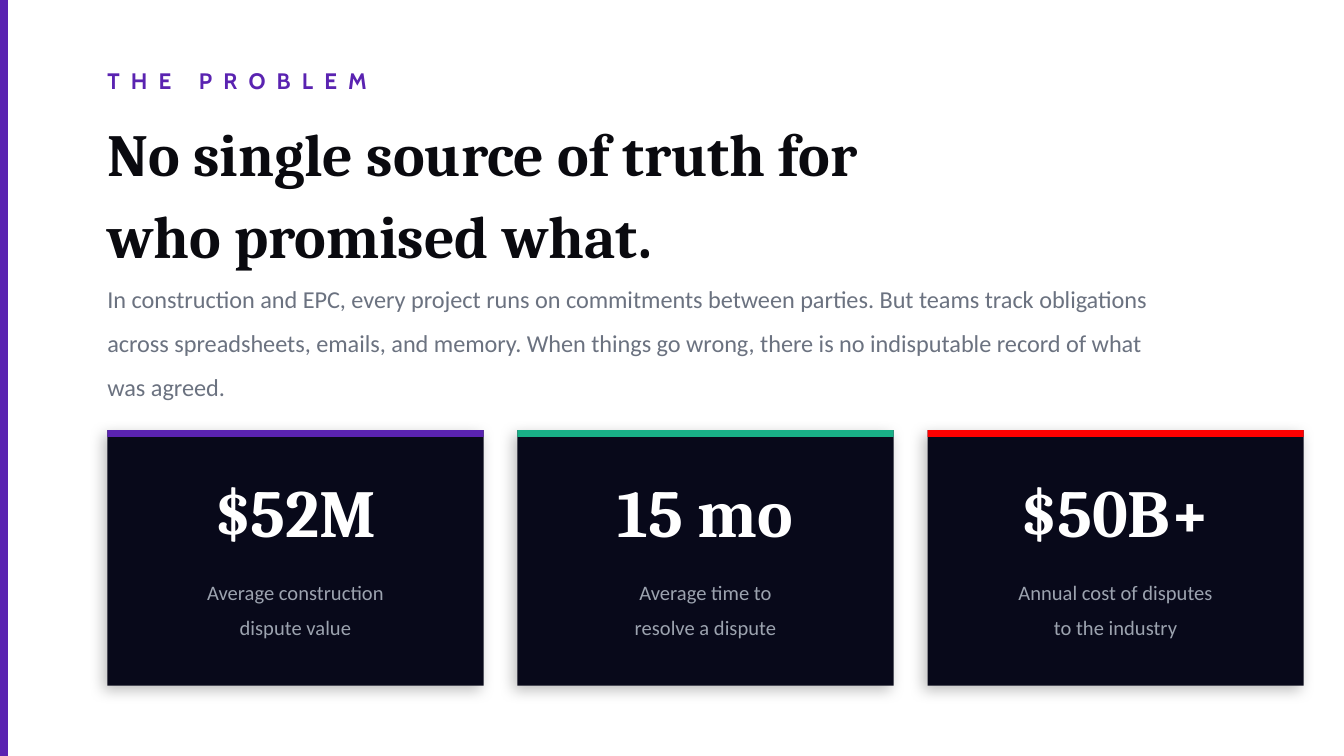
from lxml import etree
from pptx import Presentation
from pptx import util as u
from pptx.dml.color import RGBColor
from pptx.enum import shapes, text
from pptx.oxml import ns

COLORS = {
    "page": "FFFFFF", "purple": "5A23B1", "green": "19B087", "red": "FF0000",
    "ink": "0A0A0F", "body": "6B7280", "card": "08091A", "label": "9CA3AF",
    "white": "FFFFFF", "shadow": "000000",
}
FORMATS = {
    "eyebrow": {"font": {"name": "Cabin", "size": u.Pt(12), "bold": True}, "color": "purple"},
    "title": {"font": {"name": "Cambria", "size": u.Pt(32), "bold": True}, "color": "ink",
              "para": {"line_spacing": 1.15}},
    "body": {"font": {"name": "Calibri", "size": u.Pt(13), "bold": False}, "color": "body",
             "para": {"line_spacing": 1.5}},
    "figure": {"font": {"name": "Cambria", "size": u.Pt(36), "bold": True}, "color": "white",
               "para": {"alignment": text.PP_ALIGN.CENTER}},
    "label": {"font": {"name": "Calibri", "size": u.Pt(11), "bold": False}, "color": "label",
              "para": {"alignment": text.PP_ALIGN.CENTER, "line_spacing": 1.4}},
}
FRAME = {
    "margin_left": 0, "margin_right": 0, "margin_top": 0, "margin_bottom": 0,
    "word_wrap": True, "auto_size": text.MSO_AUTO_SIZE.NONE,
    "vertical_anchor": text.MSO_ANCHOR.MIDDLE,
}
STATS = [
    ("$52M", "Average construction\ndispute value", "purple"),
    ("15 mo", "Average time to\nresolve a dispute", "green"),
    ("$50B+", "Annual cost of disputes\nto the industry", "red"),
]
MARGIN, CARD_TOP, CARD_WIDTH, CARD_STEP = 2.03, 8.13, 7.11, 7.75


def apply(target, values):
    for name, value in values.items():
        setattr(target, name, value)


def color(name):
    return RGBColor.from_string(COLORS[name])


class Painter:
    def __init__(self, page):
        self.page = page
        page.background.fill.solid()
        page.background.fill.fore_color.rgb = color("page")

    def fill_text(self, box, words, style, spacing=0):
        look = FORMATS[style]
        frame = box.text_frame
        frame.text = words
        apply(frame, FRAME)
        for para in frame.paragraphs:
            apply(para, {"alignment": text.PP_ALIGN.LEFT, **look.get("para", {})})
            for span in para.runs:
                apply(span.font, look["font"])
                span.font.color.rgb = color(look["color"])
                if spacing:
                    span._r.get_or_add_rPr().set("spc", str(spacing * 100))

    def title(self, words, left, top, width, height):
        box = self.page.shapes.title
        apply(box, {"left": u.Cm(left), "top": u.Cm(top),
                    "width": u.Cm(width), "height": u.Cm(height)})
        self.fill_text(box, words, "title")

    def label(self, words, style, left, top, width, height, spacing=0):
        box = self.page.shapes.add_textbox(*map(u.Cm, (left, top, width, height)))
        self.fill_text(box, words, style, spacing)

    def block(self, fill, left, top, width, height, shadow=False):
        box = self.page.shapes.add_shape(
            shapes.MSO_SHAPE.RECTANGLE, *map(u.Cm, (left, top, width, height)))
        box.fill.solid()
        box.fill.fore_color.rgb = color(fill)
        box.line.fill.background()
        box.shadow.inherit = False
        if shadow:
            self.cast_shadow(box)

    def cast_shadow(self, box):
        effects = box._element.spPr.find(ns.qn("a:effectLst"))
        outer = etree.SubElement(
            effects, ns.qn("a:outerShdw"), blurRad=str(u.Pt(8)), dist=str(u.Pt(3)),
            dir=str(135 * 60000), algn="bl", rotWithShape="0")
        tint = etree.SubElement(outer, ns.qn("a:srgbClr"), val=COLORS["shadow"])
        etree.SubElement(tint, ns.qn("a:alpha"), val="25000")

    def card(self, left, figure, caption, accent):
        self.block("card", left, CARD_TOP, CARD_WIDTH, 4.83, shadow=True)
        self.block(accent, left, CARD_TOP, CARD_WIDTH, 0.13)
        self.label(figure, "figure", left, 8.76, CARD_WIDTH, 1.78)
        self.label(caption, "label", left, 10.54, CARD_WIDTH, 1.78)


def main():
    deck = Presentation()
    apply(deck, {"slide_width": u.Cm(25.4), "slide_height": u.Cm(14.29)})
    painter = Painter(deck.slides.add_slide(deck.slide_layouts.get_by_name("Title Only")))
    painter.block("purple", 0, 0, 0.15, 14.29)
    painter.label("THE PROBLEM", "eyebrow", MARGIN, 1.02, 12.7, 1.02, spacing=6)
    painter.title("No single source of truth for\nwho promised what.", MARGIN, 2.29, 20.32, 2.54)
    painter.label(
        "In construction and EPC, every project runs on commitments between parties. "
        "But teams track obligations across spreadsheets, emails, and memory. "
        "When things go wrong, there is no indisputable record of what was agreed.",
        "body", MARGIN, 5.33, 20.32, 2.03)
    for index, stat in enumerate(STATS):
        painter.card(MARGIN + index * CARD_STEP, *stat)
    deck.save("out.pptx")


if __name__ == "__main__":
    main()
